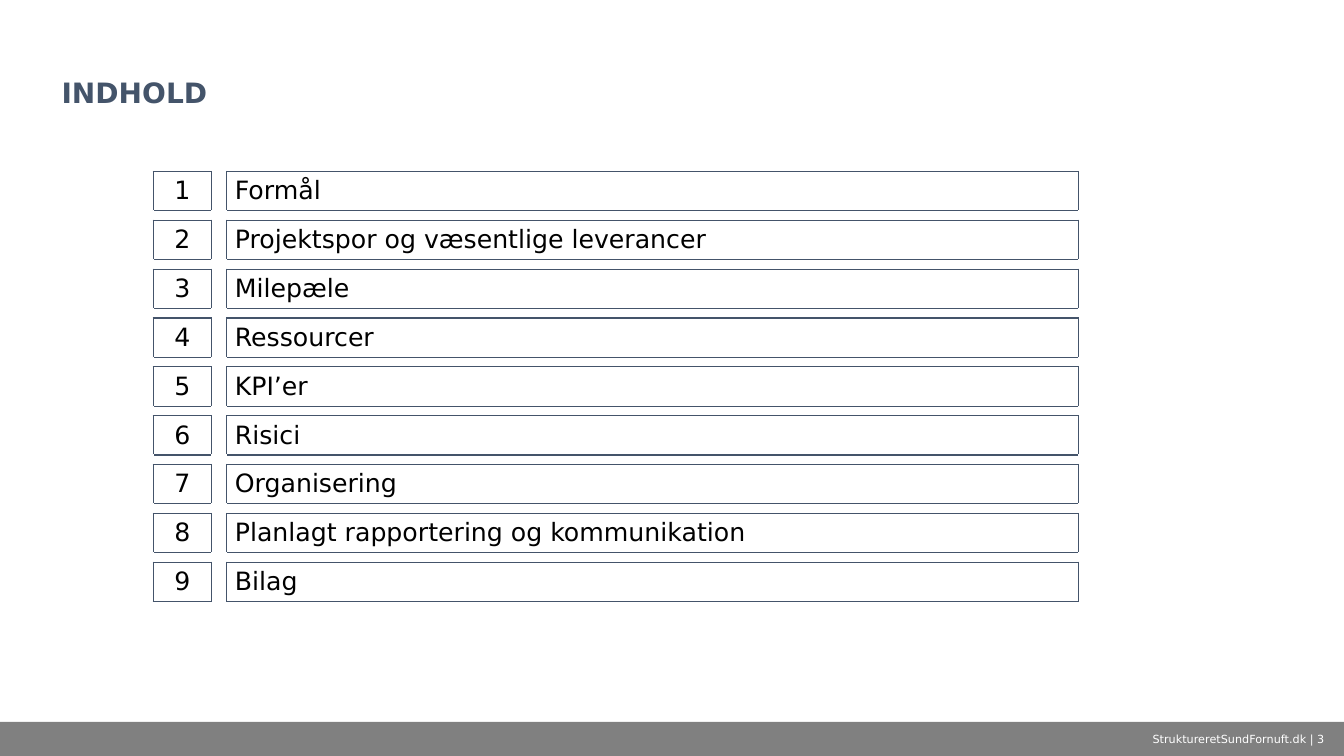
from dataclasses import dataclass

from lxml.etree import SubElement
from pptx import Presentation
from pptx.dml.color import RGBColor
from pptx.enum.shapes import MSO_SHAPE as Shape
from pptx.enum.text import MSO_ANCHOR as Anchor, MSO_AUTO_SIZE as AutoSize, PP_ALIGN as Align
from pptx.oxml.ns import qn
from pptx.util import Inches, Pt

TOPICS = (
    "Formål",
    "Projektspor og væsentlige leverancer",
    "Milepæle",
    "Ressourcer",
    "KPI’er",
    "Risici",
    "Organisering",
    "Planlagt rapportering og kommunikation",
    "Bilag",
)


@dataclass(frozen=True)
class Theme:
    font: str = "DejaVu Sans"
    navy: str = "44546A"
    grey: str = "808080"
    white: str = "FFFFFF"
    black: str = "000000"
    title_size: int = 20
    entry_size: int = 18
    footer_size: int = 8
    gap_size: int = 1
    border: int = 1


def apply(target, values):
    for name, value in values.items():
        setattr(target, name, value)


class SlideBuilder:
    """Holds the theme and slide; lengths are percentages of the slide's size."""

    def __init__(self, deck, theme):
        self.theme = theme
        self.width, self.height = deck.slide_width, deck.slide_height
        self.page = deck.slides.add_slide(deck.slide_layouts[5])

    def across(self, share):
        return round(self.width * share / 100)

    def down(self, share):
        return round(self.height * share / 100)

    def area(self, left, top, width, height):
        return self.across(left), self.down(top), self.across(width), self.down(height)

    def add_text(self, frame, text, size, color, bold=False, **layout):
        para = frame.paragraphs[0]
        apply(para, layout)
        span = para.add_run()
        span.text = text
        apply(span.font, {"name": self.theme.font, "size": Pt(size), "bold": bold})
        span.font.color.rgb = RGBColor.from_string(color)

    def title(self, text, area):
        box = self.page.shapes.title
        apply(box, dict(zip(("left", "top", "width", "height"), self.area(*area))))
        apply(box.text_frame, {"vertical_anchor": Anchor.BOTTOM, "word_wrap": True,
                               "auto_size": AutoSize.NONE})
        self.add_text(box.text_frame, text, self.theme.title_size, self.theme.navy, bold=True,
                      alignment=Align.LEFT, line_spacing=0.9)

    def bar(self, area):
        band = self.page.shapes.add_shape(Shape.RECTANGLE, *self.area(*area))
        band.shadow.inherit = False
        band.fill.solid()
        band.fill.fore_color.rgb = RGBColor.from_string(self.theme.grey)
        band.line.fill.background()

    def footer(self, text, area):
        box = self.page.shapes.add_textbox(*self.area(*area))
        apply(box.text_frame, {"vertical_anchor": Anchor.MIDDLE, "word_wrap": True})
        self.add_text(box.text_frame, text, self.theme.footer_size, self.theme.white,
                      alignment=Align.CENTER)

    def borders(self, cell, sides, upright):
        """Colour left and right edges with sides, top and bottom with upright."""
        properties = cell._tc.get_or_add_tcPr()
        for edge, color in zip("LRTB", (sides, sides, upright, upright)):
            line = SubElement(properties, qn(f"a:ln{edge}"), w=str(Pt(self.theme.border)))
            SubElement(SubElement(line, qn("a:solidFill")), qn("a:srgbClr"), val=color)

    def agenda(self, topics, area, columns, row_height):
        """Numbered topics in boxes, kept apart by narrow empty rows and a column."""
        theme = self.theme
        row_count = 2 * len(topics) - 1
        gap = (area[3] - row_height * len(topics)) / (len(topics) - 1)
        table = self.page.shapes.add_table(row_count, len(columns), *self.area(*area)).table
        apply(table, {"first_row": False, "horz_banding": False})
        for column, width in zip(table.columns, columns):
            column.width = self.across(width)
        for row_index, row in enumerate(table.rows):
            in_entry_row = row_index % 2 == 0
            row.height = self.down(row_height if in_entry_row else gap)
            for column_index, cell in enumerate(row.cells):
                in_entry_column = column_index != 1
                apply(cell, {"margin_left": 0, "margin_right": 0, "margin_top": 0,
                             "margin_bottom": 0, "vertical_anchor": Anchor.MIDDLE})
                self.borders(cell, theme.navy if in_entry_row else theme.white,
                             theme.navy if in_entry_column else theme.white)
                cell.fill.background()
                if not (in_entry_row and in_entry_column):
                    SubElement(cell.text_frame.paragraphs[0]._p, qn("a:endParaRPr"),
                               sz=str(theme.gap_size * 100))
                    continue
                number = row_index // 2
                if column_index == 0:
                    text, align = str(number + 1), Align.CENTER
                else:
                    text, align = topics[number], Align.LEFT
                    cell.margin_left = Inches(0.08)
                self.add_text(cell.text_frame, text, theme.entry_size, theme.black,
                              alignment=align)


def main():
    deck = Presentation()
    apply(deck, {"slide_width": Inches(13.33), "slide_height": Inches(7.5)})
    builder = SlideBuilder(deck, Theme())
    builder.bar((0, 95.47, 100, 4.53))
    builder.title("INDHOLD", (3.83, 2.27, 92.35, 12.93))
    builder.footer("StruktureretSundFornuft.dk | 3", (84.32, 95.47, 15.68, 4.53))
    builder.agenda(TOPICS, (11.4, 22.67, 68.87, 56.93), (4.35, 1.13, 63.39), 5.2)
    deck.save("out.pptx")


if __name__ == "__main__":
    main()
